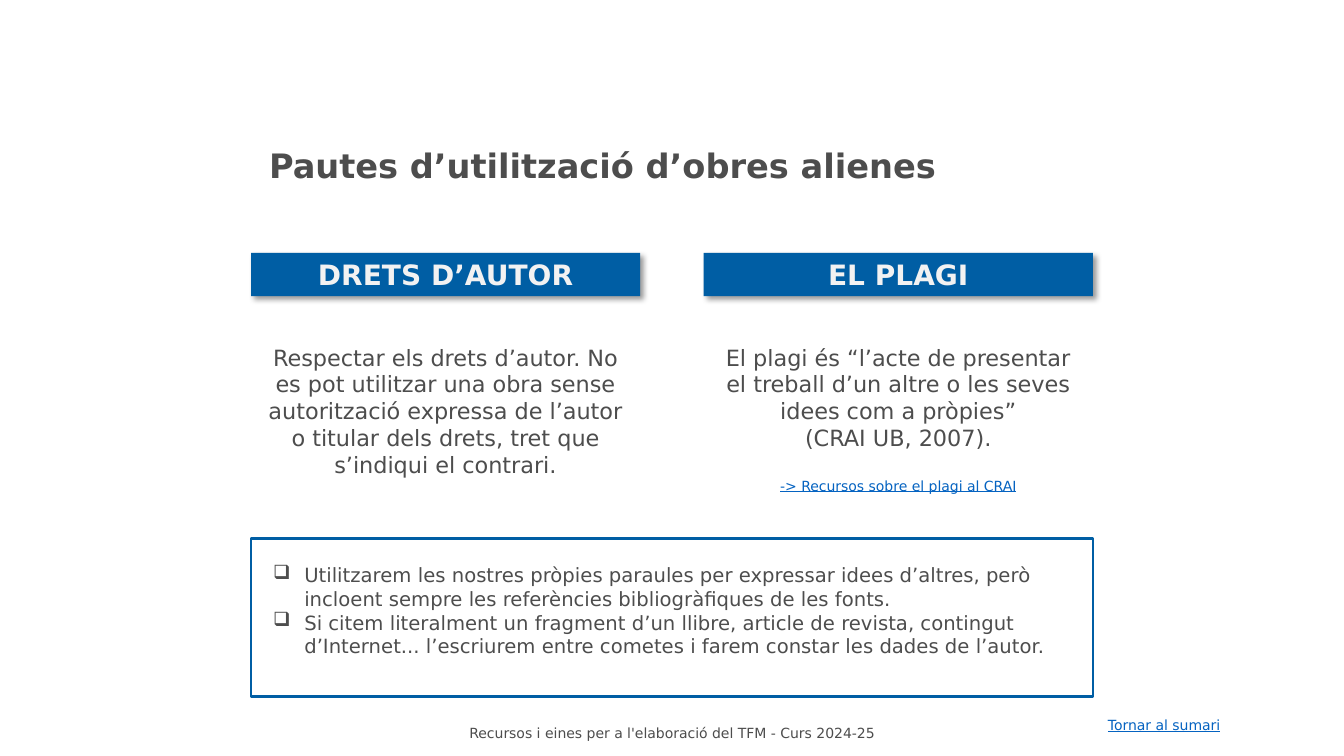
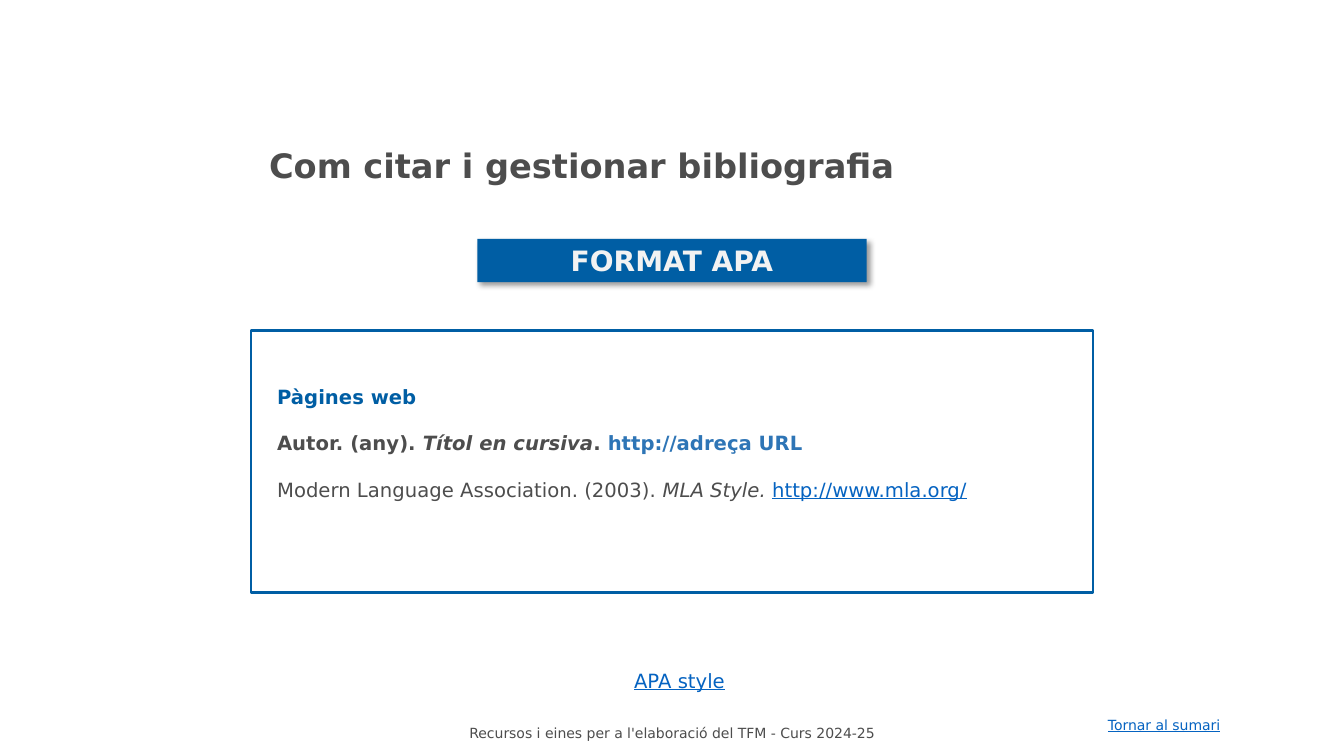
"""Builds two slides on using and citing other authors' works."""
import lxml.etree
import pptx
import pptx.dml.color
import pptx.enum.shapes
import pptx.enum.text
import pptx.oxml
import pptx.oxml.ns
import pptx.util

Inches = pptx.util.Inches
Pt = pptx.util.Pt
ALIGN = pptx.enum.text.PP_ALIGN
ANCHOR = pptx.enum.text.MSO_ANCHOR

FONT = "DejaVu Sans"
GREY, BLUE, PALE = "4D4D4D", "005EA4", "F2F2F2"
LINK, URL = "0563C1", "2E75B6"
LEFT, FRAME_WIDTH, BAND_WIDTH, BAND_HEIGHT = 2.49, 8.35, 3.86, 0.43

FOOTER = "Recursos i eines per a l'elaboració del TFM - Curs 2024-25"
BACK_LINK = "Tornar al sumari"

RIGHTS = {
    "title": "Pautes d’utilització d’obres alienes",
    "columns": [
        ("DRETS D’AUTOR", [
            "Respectar els drets d’autor. No es pot utilitzar una obra sense autorització "
            "expressa de l’autor o titular dels drets, tret que s’indiqui el contrari.",
        ], None),
        ("EL PLAGI", [
            "El plagi és “l’acte de presentar el treball d’un altre o les seves idees "
            "com a pròpies”",
            "(CRAI UB, 2007).",
        ], "-> Recursos sobre el plagi al CRAI"),
    ],
    "rules": [
        "Utilitzarem les nostres pròpies paraules per expressar idees d’altres, però "
        "incloent sempre les referències bibliogràfiques de les fonts.",
        "Si citem literalment un fragment d’un llibre, article de revista, contingut "
        "d’Internet... l’escriurem entre cometes i farem constar les dades de l’autor.",
    ],
}

CITING = {
    "title": "Com citar i gestionar bibliografia",
    "band": "FORMAT APA",
    "reference": [
        [("Pàgines web", {"bold": True, "color": BLUE})],
        [("Autor. (any). ", {"bold": True}),
         ("Títol en cursiva", {"bold": True, "italic": True}),
         (". ", {"bold": True}),
         ("http://adreça URL", {"bold": True, "color": URL})],
        [("Modern Language Association. (2003). ", {}),
         ("MLA Style. ", {"italic": True}),
         ("http://www.mla.org/", {"color": LINK, "underline": True})],
    ],
    "link": "APA style",
}


def rgb(value):
    return pptx.dml.color.RGBColor.from_string(value)


def add_bullet(paragraph):
    properties = paragraph._p.get_or_add_pPr()
    properties.set("marL", str(Inches(0.31)))
    properties.set("indent", str(-Inches(0.31)))
    color = lxml.etree.SubElement(properties, pptx.oxml.ns.qn("a:buClr"))
    lxml.etree.SubElement(color, pptx.oxml.ns.qn("a:srgbClr"), val=GREY)
    lxml.etree.SubElement(properties, pptx.oxml.ns.qn("a:buChar"), char="❑")


def write(frame, paragraphs, size, align=ALIGN.LEFT, gap=0, bullet=False):
    for index, runs in enumerate(paragraphs):
        paragraph = frame.paragraphs[0] if index == 0 else frame.add_paragraph()
        paragraph.alignment = align
        if index and gap:
            paragraph.space_before = Pt(gap)
        if bullet:
            add_bullet(paragraph)
        for text, style in runs:
            run = paragraph.add_run()
            run.text = text
            run.font.name = FONT
            run.font.size = Pt(style.get("size", size))
            run.font.bold = style.get("bold", False)
            run.font.italic = style.get("italic", False)
            run.font.underline = style.get("underline", False)
            run.font.color.rgb = rgb(style.get("color", GREY))


def add_text(slide, box, paragraphs, size, wrap=True, **layout):
    frame = slide.shapes.add_textbox(*map(Inches, box)).text_frame
    frame.word_wrap = wrap
    write(frame, paragraphs, size, **layout)
    return frame


def add_link(slide, box, text, size):
    add_text(slide, box, [[(text, {"color": LINK, "underline": True})]], size, wrap=False)


def add_rectangle(slide, box):
    rectangle = slide.shapes.add_shape(
        pptx.enum.shapes.MSO_SHAPE.RECTANGLE, *map(Inches, box))
    rectangle.shadow.inherit = False
    return rectangle


def add_frame(slide, top, height):
    frame = add_rectangle(slide, (LEFT, top, FRAME_WIDTH, height))
    frame.fill.background()
    frame.line.color.rgb = rgb(BLUE)
    frame.line.width = Pt(2)


def add_band(slide, left, top, text):
    band = add_rectangle(slide, (left, top, BAND_WIDTH, BAND_HEIGHT))
    band.fill.solid()
    band.fill.fore_color.rgb = rgb(BLUE)
    band.line.fill.background()
    effects = band._element.spPr.find(pptx.oxml.ns.qn("a:effectLst"))
    effects.append(pptx.oxml.parse_xml(
        f'<a:outerShdw {pptx.oxml.ns.nsdecls("a")} blurRad="{Pt(4)}" dist="{Pt(3)}" '
        'dir="2700000" algn="tl" rotWithShape="0">'
        '<a:srgbClr val="000000"><a:alpha val="40000"/></a:srgbClr></a:outerShdw>'))
    band.text_frame.word_wrap = True
    band.text_frame.vertical_anchor = ANCHOR.TOP
    write(band.text_frame, [[(text, {"bold": True, "color": PALE})]], 20, ALIGN.CENTER)


def add_slide(deck, title):
    slide = deck.slides.add_slide(deck.slide_layouts[6])
    footer = add_text(slide, (3.75, 7.14, 5.83, 0.27), [[(FOOTER, {})]], 10,
                      align=ALIGN.CENTER)
    footer.vertical_anchor = ANCHOR.MIDDLE
    add_link(slide, (10.89, 7.06, 1.36, 0.27), BACK_LINK, 10)
    add_text(slide, (2.57, 1.39, FRAME_WIDTH, 0.5), [[(title, {"bold": True})]], 24)
    return slide


def build_rights(deck):
    slide = add_slide(deck, RIGHTS["title"])
    step = FRAME_WIDTH - BAND_WIDTH
    for index, (heading, body, link) in enumerate(RIGHTS["columns"]):
        left = LEFT + index * step
        add_band(slide, left, 2.51, heading)
        frame = add_text(slide, (left, 3.36, BAND_WIDTH, 1.78),
                         [[(text, {})] for text in body], 16, align=ALIGN.CENTER)
        if link:
            paragraph = frame.add_paragraph()
            paragraph.alignment = ALIGN.CENTER
            paragraph.space_before = Pt(18.6)
            run = paragraph.add_run()
            run.text = link
            run.font.name = FONT
            run.font.size = Pt(10)
            run.font.underline = True
            run.font.color.rgb = rgb(LINK)
    add_frame(slide, 5.34, 1.57)
    add_text(slide, (2.61, 5.54, 8.11, 1.04),
             [[(rule, {})] for rule in RIGHTS["rules"]], 14, bullet=True)


def build_citing(deck):
    slide = add_slide(deck, CITING["title"])
    add_frame(slide, 3.28, 2.6)
    add_text(slide, (2.65, 3.77, 8.03, 1.28), CITING["reference"], 14, gap=16.3)
    add_band(slide, LEFT + (FRAME_WIDTH - BAND_WIDTH) / 2, 2.37, CITING["band"])
    add_link(slide, (6.19, 6.59, 1.11, 0.34), CITING["link"], 14)


def main():
    deck = pptx.Presentation()
    deck.slide_width = Inches(13.33)
    deck.slide_height = Inches(7.5)
    build_rights(deck)
    build_citing(deck)
    deck.save("out.pptx")


if __name__ == "__main__":
    main()
